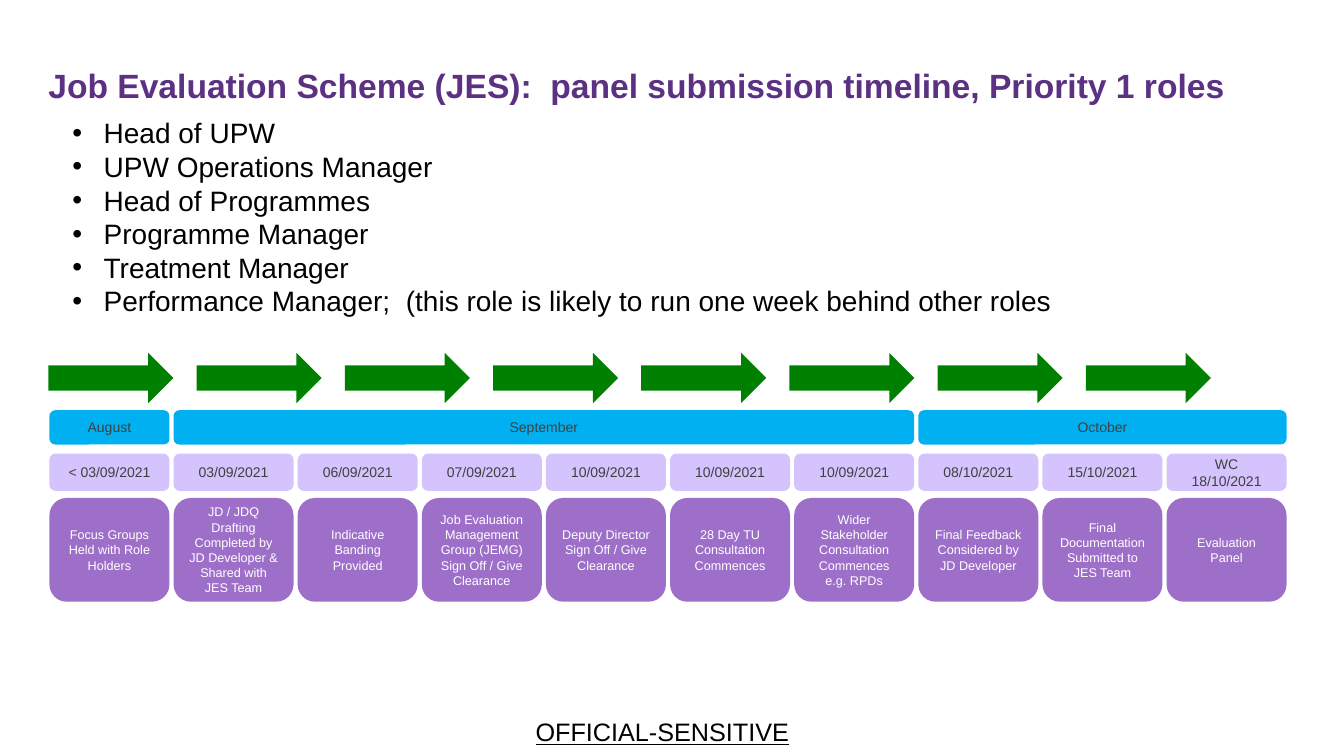
from lxml import etree
from pptx import Presentation
from pptx.dml.color import RGBColor
from pptx.enum import shapes, text
from pptx.oxml import ns
from pptx.util import Inches, Pt

COLOURS = {
    "title": "5C3183",
    "body": "000000",
    "arrow": "008000",
    "month": "00B0F0",
    "date": "D4C3FD",
    "step": "9E6FC9",
    "label": "404040",
    "step_text": "FFFFFF",
}
ROLES = [
    "Head of UPW",
    "UPW Operations Manager",
    "Head of Programmes",
    "Programme Manager",
    "Treatment Manager",
    "Performance Manager;  (this role is likely to run one week behind other roles",
]
MONTHS = [("August", 0, 1), ("September", 1, 6), ("October", 7, 3)]
STAGES = [
    ("< 03/09/2021", "Focus Groups Held with Role Holders"),
    ("03/09/2021", "JD / JDQ Drafting Completed by JD Developer & Shared with JES Team"),
    ("06/09/2021", "Indicative Banding Provided"),
    ("07/09/2021", "Job Evaluation Management Group (JEMG) Sign Off / Give Clearance"),
    ("10/09/2021", "Deputy Director Sign Off / Give Clearance"),
    ("10/09/2021", "28 Day TU Consultation Commences"),
    ("10/09/2021", "Wider Stakeholder Consultation Commences e.g. RPDs"),
    ("08/10/2021", "Final Feedback Considered by JD Developer"),
    ("15/10/2021", "Final Documentation Submitted to JES Team"),
    ("WC 18/10/2021", "Evaluation Panel"),
]
TIMELINE_LEFT, TIMELINE_WIDTH, STAGE_WIDTH = 0.49, 12.27, 1.19
STAGE_PITCH = (TIMELINE_WIDTH - STAGE_WIDTH) / (len(STAGES) - 1)
ARROW_COUNT, ARROW_LEFT, ARROW_PITCH = 8, 0.48, 1.47


def style(paragraph, size, colour, bold=False, underline=False):
    """Format every run of a paragraph."""
    for run in paragraph.runs:
        run.font.name = "Arial"
        run.font.size = Pt(size)
        run.font.bold = bold
        run.font.underline = underline
        run.font.color.rgb = RGBColor.from_string(COLOURS[colour])


def add_title(slide, wording):
    """Place and format the slide title."""
    title = slide.shapes.title
    title.left, title.top = Inches(0.48), Inches(0.38)
    title.width, title.height = Inches(13.35), Inches(0.98)
    frame = title.text_frame
    frame.text = wording
    frame.vertical_anchor = text.MSO_ANCHOR.MIDDLE
    frame.margin_left = frame.margin_right = frame.margin_top = frame.margin_bottom = 0
    heading = frame.paragraphs[0]
    heading.alignment = text.PP_ALIGN.LEFT
    heading.line_spacing = 0.9
    style(heading, 24, "title", bold=True)


def add_bullet(paragraph):
    """Give a paragraph a round bullet with a hanging indent."""
    properties = paragraph._p.get_or_add_pPr()
    properties.set("marL", str(Inches(0.31)))
    properties.set("indent", str(Inches(-0.31)))
    etree.SubElement(properties, ns.qn("a:buFont")).set("typeface", "Arial")
    etree.SubElement(properties, ns.qn("a:buChar")).set("char", "•")


def add_roles(slide):
    """List the priority roles."""
    box = slide.shapes.add_textbox(Inches(0.62), Inches(1.1), Inches(10.04), Inches(2.36))
    frame = box.text_frame
    frame.word_wrap = True
    frame.text = "\n".join(ROLES)
    for role in frame.paragraphs:
        role.line_spacing = Pt(24)
        add_bullet(role)
        style(role, 20, "body")


def add_filled(slide, preset, left, top, width, height, fill):
    """Draw a flat preset shape without an outline."""
    shape = slide.shapes.add_shape(
        preset, Inches(left), Inches(top), Inches(width), Inches(height))
    shape.shadow.inherit = False
    shape.fill.solid()
    shape.fill.fore_color.rgb = RGBColor.from_string(COLOURS[fill])
    shape.line.fill.background()
    return shape


def add_card(slide, label, column, span, top, height, fill, size, colour):
    """Draw a labelled rounded card across timeline columns."""
    left = TIMELINE_LEFT + column * STAGE_PITCH
    width = (span - 1) * STAGE_PITCH + STAGE_WIDTH
    card = add_filled(slide, shapes.MSO_SHAPE.ROUNDED_RECTANGLE,
                      left, top, width, height, fill)
    frame = card.text_frame
    frame.word_wrap = True
    frame.vertical_anchor = text.MSO_ANCHOR.MIDDLE
    frame.text = label
    frame.paragraphs[0].alignment = text.PP_ALIGN.CENTER
    style(frame.paragraphs[0], size, colour)


def add_timeline(slide):
    """Draw the arrows, months, dates and steps."""
    for position in range(ARROW_COUNT):
        add_filled(slide, shapes.MSO_SHAPE.RIGHT_ARROW,
                   ARROW_LEFT + position * ARROW_PITCH, 3.5, 1.24, 0.5, "arrow")
    for month, column, span in MONTHS:
        add_card(slide, month, column, span, 4.07, 0.34, "month", 10, "label")
    for column, (date, step) in enumerate(STAGES):
        add_card(slide, date, column, 1, 4.5, 0.37, "date", 10, "label")
        add_card(slide, step, column, 1, 4.94, 1.03, "step", 9, "step_text")


def add_marking(slide, wording):
    """Put the protective marking at the foot of the slide."""
    marking = slide.shapes.add_textbox(Inches(5.2), Inches(7.06), Inches(2.74), Inches(0.4))
    frame = marking.text_frame
    frame.word_wrap = False
    frame.text = wording
    frame.paragraphs[0].alignment = text.PP_ALIGN.CENTER
    style(frame.paragraphs[0], 18, "body", underline=True)


def main():
    """Build and save the slide."""
    deck = Presentation()
    deck.slide_width, deck.slide_height = Inches(13.33), Inches(7.5)
    slide = deck.slides.add_slide(deck.slide_layouts[5])
    add_title(slide, "Job Evaluation Scheme (JES):  panel submission timeline, Priority 1 roles")
    add_roles(slide)
    add_timeline(slide)
    add_marking(slide, "OFFICIAL-SENSITIVE")
    deck.save("out.pptx")


if __name__ == "__main__":
    main()
